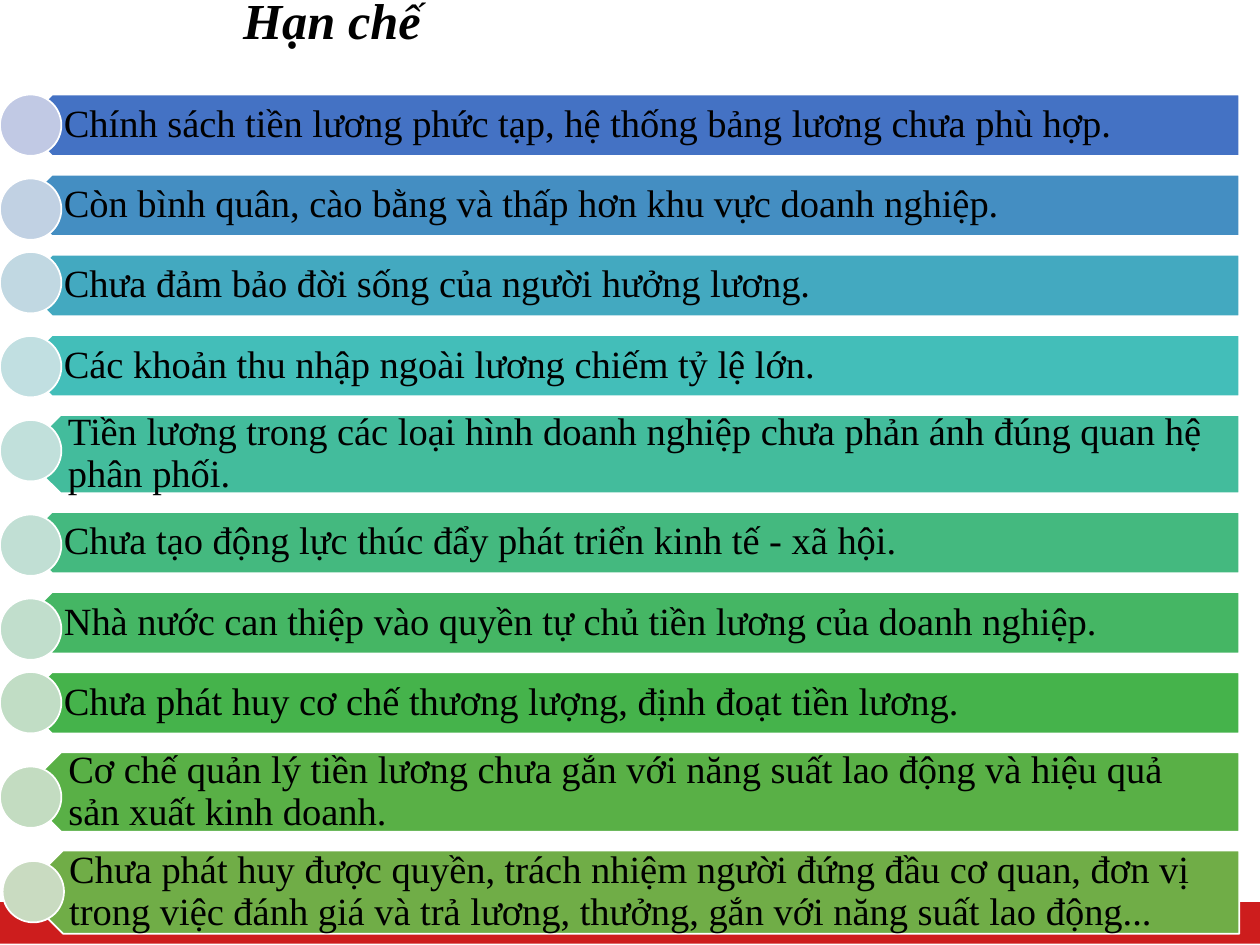
"""Build a slide listing the shortcomings of the wage policy."""
from dataclasses import dataclass

from pptx import Presentation
from pptx.dml.color import RGBColor
from pptx.enum.shapes import MSO_SHAPE
from pptx.enum.text import MSO_ANCHOR
from pptx.util import Pt

RECTANGLE = MSO_SHAPE.RECTANGLE
PENTAGON = MSO_SHAPE.PENTAGON
OVAL = MSO_SHAPE.OVAL
MIDDLE = MSO_ANCHOR.MIDDLE


@dataclass(frozen=True)
class Theme:
    """Colours and type sizes of the slide."""
    font: str = "Times New Roman"
    ink: str = "000000"
    outline: str = "FFFFFF"
    footer: str = "CD1D1D"
    title_size: float = 28.8
    item_size: float = 22


@dataclass(frozen=True)
class Limitation:
    """One row: wording, bar height, bar and marker colours, marker place."""
    wording: str
    height: float
    bar_color: str
    marker_color: str
    marker_top: float
    marker_left: float = 0


THEME = Theme()
SLIDE_WIDTH, SLIDE_HEIGHT = 720, 540
BAR_LEFT, BAR_WIDTH = 12.2, 696
FIRST_TOP, ROW_GAP = 54, 10.7
MARKER_SIZE = 35.1
ONE_LINE = 35.1

LIMITATIONS = [
    Limitation("Chính sách tiền lương phức tạp, hệ thống bảng lương chưa phù hợp.",
               ONE_LINE, "4472C4", "C1C9E4", 54),
    Limitation("Còn bình quân, cào bằng và thấp hơn khu vực doanh nghiệp.",
               ONE_LINE, "448EC2", "C1D1E3", 102),
    Limitation("Chưa đảm bảo đời sống của người hưởng lương.",
               ONE_LINE, "43A9C0", "C1D8E2", 144),
    Limitation("Các khoản thu nhập ngoài lương chiếm tỷ lệ lớn.",
               ONE_LINE, "43BEB9", "C1DFE1", 192),
    Limitation("Tiền lương trong các loại hình doanh nghiệp chưa phản ánh đúng "
               "quan hệ phân phối.",
               44.6, "43BC9C", "C1E0DB", 240),
    Limitation("Chưa tạo động lực thúc đẩy phát triển kinh tế - xã hội.",
               ONE_LINE, "44B97F", "C1DFD4", 294),
    Limitation("Nhà nước can thiệp vào quyền tự chủ tiền lương của doanh nghiệp.",
               ONE_LINE, "45B664", "C1DECC", 342),
    Limitation("Chưa phát huy cơ chế thương lượng, định đoạt tiền lương.",
               ONE_LINE, "45B34B", "C1DDC5", 384),
    Limitation("Cơ chế quản lý tiền lương chưa gắn với năng suất lao động và "
               "hiệu quả sản xuất kinh doanh.",
               45.4, "59B046", "C3DCC1", 438),
    Limitation("Chưa phát huy được quyền, trách nhiệm người đứng đầu cơ quan, "
               "đơn vị trong việc đánh giá và trả lương, thưởng, gắn với năng "
               "suất lao động...",
               47.5, "70AD47", "C9DBC1", 492, 1.5),
]


def add_block(slide, preset, bounds, color, outline=None):
    """Add a filled preset shape, outlined when a colour is given."""
    block = slide.shapes.add_shape(preset, *map(Pt, bounds))
    block.shadow.inherit = False
    block.fill.solid()
    block.fill.fore_color.rgb = RGBColor.from_string(color)
    if outline:
        block.line.color.rgb = RGBColor.from_string(outline)
        block.line.width = Pt(1)
    else:
        block.line.fill.background()
    return block


def add_wording(slide, wording, bounds, insets, size, emphasis=False):
    """Add vertically centred text; insets run left, top, right, bottom."""
    frame = slide.shapes.add_textbox(*map(Pt, bounds)).text_frame
    frame.word_wrap = True
    frame.vertical_anchor = MIDDLE
    (frame.margin_left, frame.margin_top,
     frame.margin_right, frame.margin_bottom) = map(Pt, insets)
    frame.text = wording
    paragraph = frame.paragraphs[0]
    paragraph.line_spacing = 0.9
    for run in paragraph.runs:
        run.font.name = THEME.font
        run.font.size = Pt(size)
        run.font.bold = run.font.italic = emphasis
        run.font.color.rgb = RGBColor.from_string(THEME.ink)


def add_limitation(slide, limitation, top):
    """Add one row: arrow bar, wording and round marker."""
    height = limitation.height
    bar = add_block(slide, PENTAGON, (BAR_LEFT, top, BAR_WIDTH, height),
                    limitation.bar_color, THEME.outline)
    bar.rotation = 180
    point = height / 4
    add_wording(slide, limitation.wording,
                (BAR_LEFT + point, top, BAR_WIDTH - point, height),
                (15.5, 6.6, 12.3, 6.6), THEME.item_size)
    add_block(slide, OVAL,
              (limitation.marker_left, limitation.marker_top,
               MARKER_SIZE, MARKER_SIZE),
              limitation.marker_color, THEME.outline)


def main():
    """Build and save the slide."""
    deck = Presentation()
    deck.slide_width, deck.slide_height = Pt(SLIDE_WIDTH), Pt(SLIDE_HEIGHT)
    slide = deck.slides.add_slide(deck.slide_layouts[6])
    add_block(slide, RECTANGLE, (0, 515.5, SLIDE_WIDTH, 23.8), THEME.footer)
    add_wording(slide, "Hạn chế", (131.8, 2.9, 210.2, 50.4),
                (7.2, 0, 7.2, 30), THEME.title_size, emphasis=True)
    top = FIRST_TOP
    for limitation in LIMITATIONS:
        add_limitation(slide, limitation, top)
        top += limitation.height + ROW_GAP
    deck.save("out.pptx")


if __name__ == "__main__":
    main()
